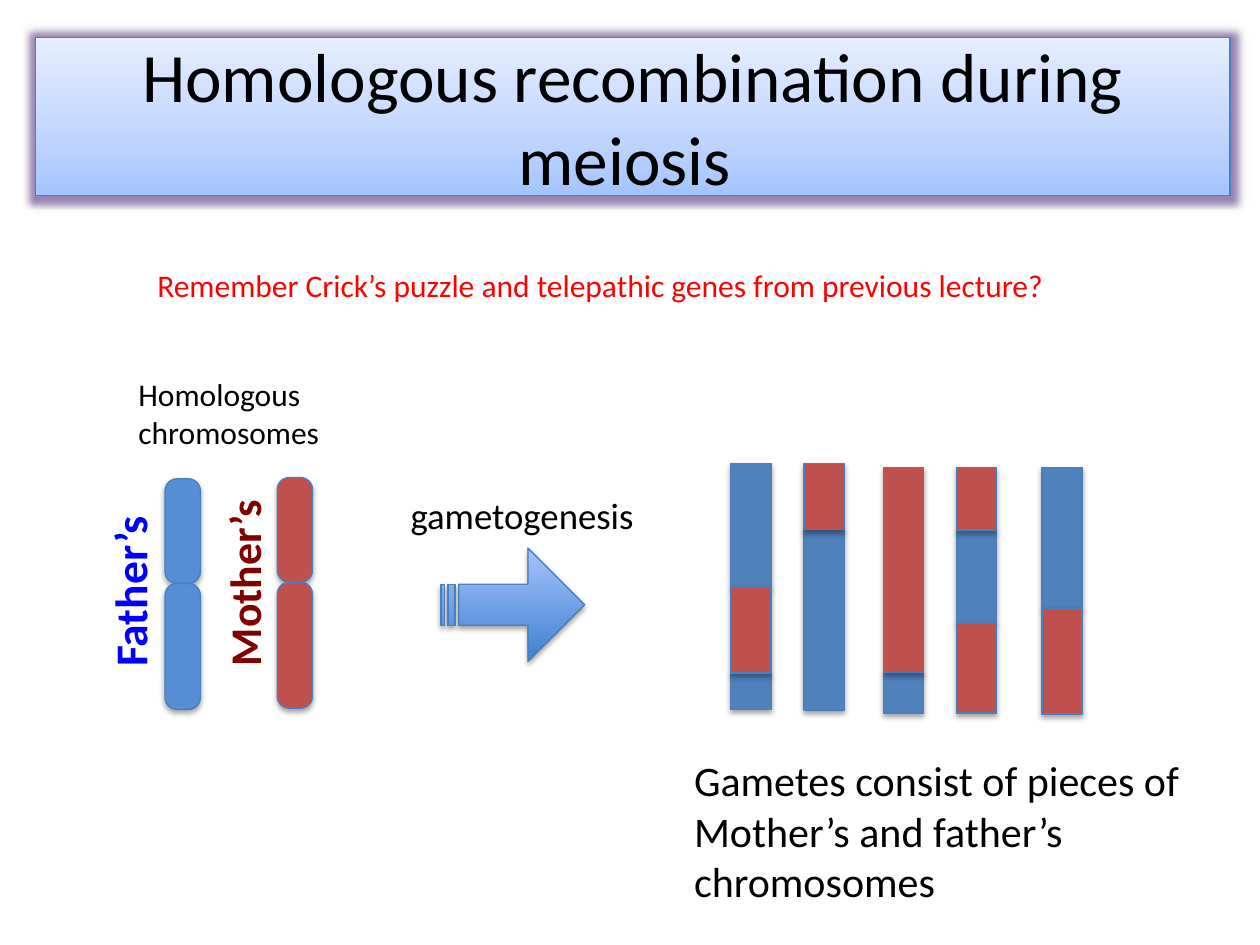
from dataclasses import dataclass

from lxml.etree import SubElement
from pptx import Presentation
from pptx.dml.color import RGBColor
from pptx.enum.shapes import MSO_SHAPE as Preset
from pptx.enum.text import MSO_ANCHOR, MSO_AUTO_SIZE as AutoSize, PP_ALIGN
from pptx.oxml.ns import qn
from pptx.util import Pt


@dataclass(frozen=True)
class Theme:
    font: str = "Calibri"
    ink: str = "000000"
    question: str = "FF0000"
    father_label: str = "0000FF"
    mother_label: str = "800000"
    father: str = "558ED5"
    father_piece: str = "4F81BD"
    mother: str = "C0504D"
    outline: str = "4B7EBC"
    glow: str = "8064A2"
    banner: tuple = ((0, "A4C4FF"), (35, "BFD4FF"), (100, "E6EEFF"))
    arrow: tuple = ((0, "3F80CE"), (100, "A4C4FF"))
    title_size: float = 39.6
    father_size: float = 26
    mother_size: float = 25
    result_size: float = 24
    process_size: float = 21
    note_size: float = 18


THEME = Theme()

# Each gamete: left, top, then its pieces from top to bottom (parent, height)
GAMETES = [
    (417.6, 265, [("father", 70.6), ("mother", 49), ("father", 20.9)]),
    (459.4, 265, [("mother", 37.8), ("father", 103)]),
    (504.7, 267, [("mother", 117.4), ("father", 23)]),
    (546.5, 267, [("mother", 36), ("father", 53.3), ("mother", 51.1)]),
    (595.4, 267, [("father", 80.6), ("mother", 60.5)]),
]
PIECE_WIDTH = 23


def add_color(parent, color, alpha):
    node = SubElement(parent, qn("a:srgbClr"), val=color)
    SubElement(node, qn("a:alpha"), val=str(alpha * 1000))


def add_shadow(shape, alpha=35, blur=3.1, distance=1.8, angle=90, glow=None):
    shape.shadow.inherit = False
    effects = shape._element.spPr.find(qn("a:effectLst"))
    if glow:
        halo = SubElement(effects, qn("a:glow"), rad=str(Pt(8)))
        add_color(halo, glow, 75)
    shadow = SubElement(effects, qn("a:outerShdw"), blurRad=str(Pt(blur)),
                        dist=str(Pt(distance)), dir=str(angle * 60000), rotWithShape="0")
    add_color(shadow, THEME.ink, alpha)


def paint(shape, fill):
    """Fill with one colour, or with gradient stops rising from the bottom."""
    if isinstance(fill, str):
        shape.fill.solid()
        shape.fill.fore_color.rgb = RGBColor.from_string(fill)
    else:
        shape.fill.gradient()
        shape.fill.gradient_angle = 90
        stops = shape._element.spPr.find(qn("a:gradFill")).find(qn("a:gsLst"))
        stops.clear()
        for position, color in fill:
            stop = SubElement(stops, qn("a:gs"), pos=str(position * 1000))
            SubElement(stop, qn("a:srgbClr"), val=color)
    shape.line.color.rgb = RGBColor.from_string(THEME.outline)
    shape.line.width = Pt(0.75)


def place(shape, box):
    shape.left, shape.top, shape.width, shape.height = map(Pt, box)


def format_text(frame, size, color, bold=False):
    for paragraph in frame.paragraphs:
        for run in paragraph.runs:
            run.font.name = THEME.font
            run.font.size = Pt(size)
            run.font.bold = bold
            run.font.color.rgb = RGBColor.from_string(color)


def add_title(slide, text):
    title = slide.shapes.title
    place(title, (20.2, 21.6, 682.6, 90))
    paint(title, THEME.banner)
    add_shadow(title, alpha=15, blur=6, distance=0, angle=225, glow=THEME.glow)
    frame = title.text_frame
    frame.text = text
    frame.word_wrap = True
    frame.auto_size = AutoSize.NONE
    frame.vertical_anchor = MSO_ANCHOR.MIDDLE
    frame.paragraphs[0].alignment = PP_ALIGN.CENTER
    format_text(frame, THEME.title_size, THEME.ink)


def add_label(slide, text, box, size, color=THEME.ink, bold=False, rotation=0):
    label = slide.shapes.add_textbox(*map(Pt, box))
    label.rotation = rotation
    frame = label.text_frame
    frame.text = text
    frame.word_wrap = False
    frame.auto_size = AutoSize.SHAPE_TO_FIT_TEXT
    format_text(frame, size, color, bold)


def add_block(shapes, preset, box, fill, adjustments=()):
    block = shapes.add_shape(preset, *map(Pt, box))
    for index, value in enumerate(adjustments):
        block.adjustments[index] = value
    paint(block, fill)
    add_shadow(block)


def add_chromosome(slide, left, top, fill):
    short_arm, long_arm = 59.8, 72
    for arm_top, height in ((top, short_arm), (top + short_arm, long_arm)):
        add_block(slide.shapes, Preset.ROUNDED_RECTANGLE,
                  (left, arm_top, 20.2, height), fill, (0.339,))


def add_gametes(slide):
    gametes = slide.shapes.add_group_shape()
    # Father's pieces lie behind the mother's
    for layer, fill in (("father", THEME.father_piece), ("mother", THEME.mother)):
        for left, top, pieces in GAMETES:
            piece_top = top
            for parent, height in pieces:
                if parent == layer:
                    add_block(gametes.shapes, Preset.RECTANGLE,
                              (left, piece_top, PIECE_WIDTH, height), fill)
                piece_top += height


def main():
    deck = Presentation()
    deck.slide_width, deck.slide_height = Pt(720), Pt(540)
    slide = deck.slides.add_slide(deck.slide_layouts[5])

    # Heading; the closing space shifts the second centred line
    add_title(slide, "Homologous recombination during meiosis ")

    # Parental chromosomes
    add_chromosome(slide, 94.3, 273.6, THEME.father)
    add_chromosome(slide, 158.4, 272.9, THEME.mother)
    add_label(slide, "Mother’s", (84.2, 313.9, 110.2, 37.4), THEME.mother_size,
              THEME.mother_label, bold=True, rotation=270)
    add_label(slide, "Father’s", (23.8, 318.2, 100.8, 38.9), THEME.father_size,
              THEME.father_label, bold=True, rotation=270)
    add_label(slide, "Homologous\nchromosomes", (72, 211, 118.8, 51.1), THEME.note_size)

    # Gametogenesis
    add_block(slide.shapes, Preset.STRIPED_RIGHT_ARROW, (252, 313.2, 82.1, 64.8),
              THEME.arrow, (0.363, 0.5))
    add_label(slide, "gametogenesis", (227.5, 277.9, 143.3, 32.4), THEME.process_size)

    # Recombined gametes
    add_gametes(slide)
    add_label(slide, "Gametes consist of pieces of\nMother’s and father’s\nchromosomes",
              (389.5, 427.7, 294.5, 94.3), THEME.result_size)

    # Question to the audience
    add_label(slide, "Remember Crick’s puzzle and telepathic genes from previous lecture?",
              (82.8, 148.3, 529.2, 28.8), THEME.note_size, THEME.question)

    deck.save("out.pptx")


if __name__ == "__main__":
    main()
